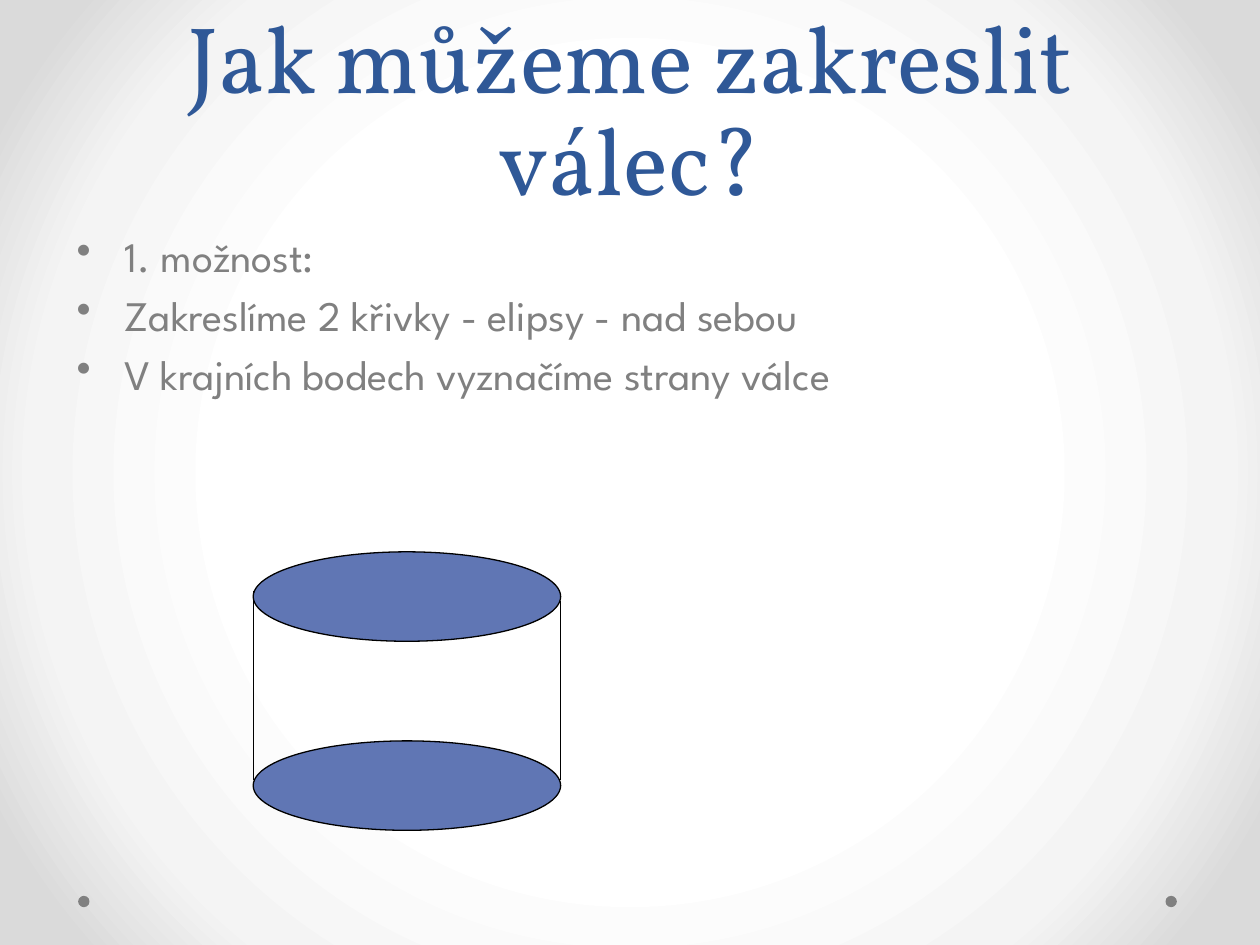
from lxml import etree
from pptx import Presentation
from pptx.dml.color import RGBColor
from pptx.enum.shapes import MSO_CONNECTOR, MSO_SHAPE
from pptx.enum.text import MSO_ANCHOR, PP_ALIGN
from pptx.oxml.ns import qn
from pptx.util import Inches, Pt

GREY, BLUE, CYLINDER_BLUE, BLACK = "808080", "2F5897", "6076B4", "000000"
TITLE_FONT, BODY_FONT = "Vollkorn", "League Spartan"


def color(value):
    return RGBColor.from_string(value)


class SlideBuilder:
    """Holds the current slide and the style of its elements."""

    line_width = Pt(0.75)

    def __init__(self, slide):
        self.slide = slide

    def radial_background(self, stops):
        self.slide.background.fill.gradient()
        gradient = self.slide.element.find(".//" + qn("a:gradFill"))
        for child in list(gradient):
            gradient.remove(child)
        stop_list = etree.SubElement(gradient, qn("a:gsLst"))
        for percent, value in stops:
            stop = etree.SubElement(stop_list, qn("a:gs"), pos=str(percent * 1000))
            etree.SubElement(stop, qn("a:srgbClr"), val=value)
        path = etree.SubElement(gradient, qn("a:path"), {"path": "circle"})
        etree.SubElement(path, qn("a:fillToRect"), l="50000", t="50000", r="50000", b="50000")

    def text(self, left, top, width, height, lines, font, size, fill,
             anchor=MSO_ANCHOR.TOP):
        box = self.slide.shapes.add_textbox(
            Inches(left), Inches(top), Inches(width), Inches(height))
        frame = box.text_frame
        frame.word_wrap = True
        frame.vertical_anchor = anchor
        frame.text = "\n".join(lines)
        for paragraph in frame.paragraphs:
            paragraph.font.name = font
            paragraph.font.size = Pt(size)
            paragraph.font.color.rgb = color(fill)
        return frame.paragraphs

    def bullets(self, paragraphs, indent, space_before):
        for paragraph in paragraphs:
            paragraph.space_before = Pt(space_before)
            properties = paragraph._p.get_or_add_pPr()
            properties.set("marL", str(Inches(indent)))
            properties.set("indent", str(-Inches(indent)))
            bullet = etree.Element(qn("a:buChar"), char="•")
            properties.find(qn("a:defRPr")).addprevious(bullet)

    def ellipse(self, left, top, width, height, fill, line=None):
        shape = self.slide.shapes.add_shape(
            MSO_SHAPE.OVAL, Inches(left), Inches(top), Inches(width), Inches(height))
        shape.shadow.inherit = False
        shape.fill.solid()
        shape.fill.fore_color.rgb = color(fill)
        if line:
            shape.line.color.rgb = color(line)
            shape.line.width = self.line_width
        else:
            shape.line.fill.background()

    def vertical_line(self, x, top, bottom, line):
        connector = self.slide.shapes.add_connector(
            MSO_CONNECTOR.STRAIGHT, Inches(x), Inches(top), Inches(x), Inches(bottom))
        connector.line.color.rgb = color(line)
        connector.line.width = self.line_width
        etree.SubElement(connector._element.spPr, qn("a:effectLst"))


def main():
    presentation = Presentation()
    presentation.slide_width, presentation.slide_height = Inches(10), Inches(7.5)
    builder = SlideBuilder(presentation.slides.add_slide(presentation.slide_layouts[6]))

    # Background and corner dots
    builder.radial_background([(50, "FFFFFF"), (76, "F4F4F4"), (92, "DADADA")])
    for left in (9.25, 0.62):
        builder.ellipse(left, 7.11, 0.09, 0.09, GREY)

    # Title
    title = builder.text(0.5, 0, 9, 1.75, ["Jak můžeme zakreslit válec?"],
                         TITLE_FONT, 54, BLUE, MSO_ANCHOR.BOTTOM)[0]
    title.alignment = PP_ALIGN.CENTER
    title.line_spacing = Pt(58)

    # Instructions
    steps = builder.text(0.51, 1.78, 9, 4.95, [
        "1. možnost:",
        "Zakreslíme 2 křivky - elipsy - nad sebou",
        "V krajních bodech vyznačíme strany válce",
    ], BODY_FONT, 24, GREY)
    builder.bullets(steps, indent=0.38, space_before=4.8)

    # Cylinder: two bases joined by two sides
    left, width = 2.01, 2.44
    for top in (5.88, 4.38):
        builder.ellipse(left, top, width, 0.71, CYLINDER_BLUE, BLACK)
    for x, top in ((left, 4.69), (left + width, 4.77)):
        builder.vertical_line(x, top, 6.19, BLACK)

    presentation.save("out.pptx")


if __name__ == "__main__":
    main()
